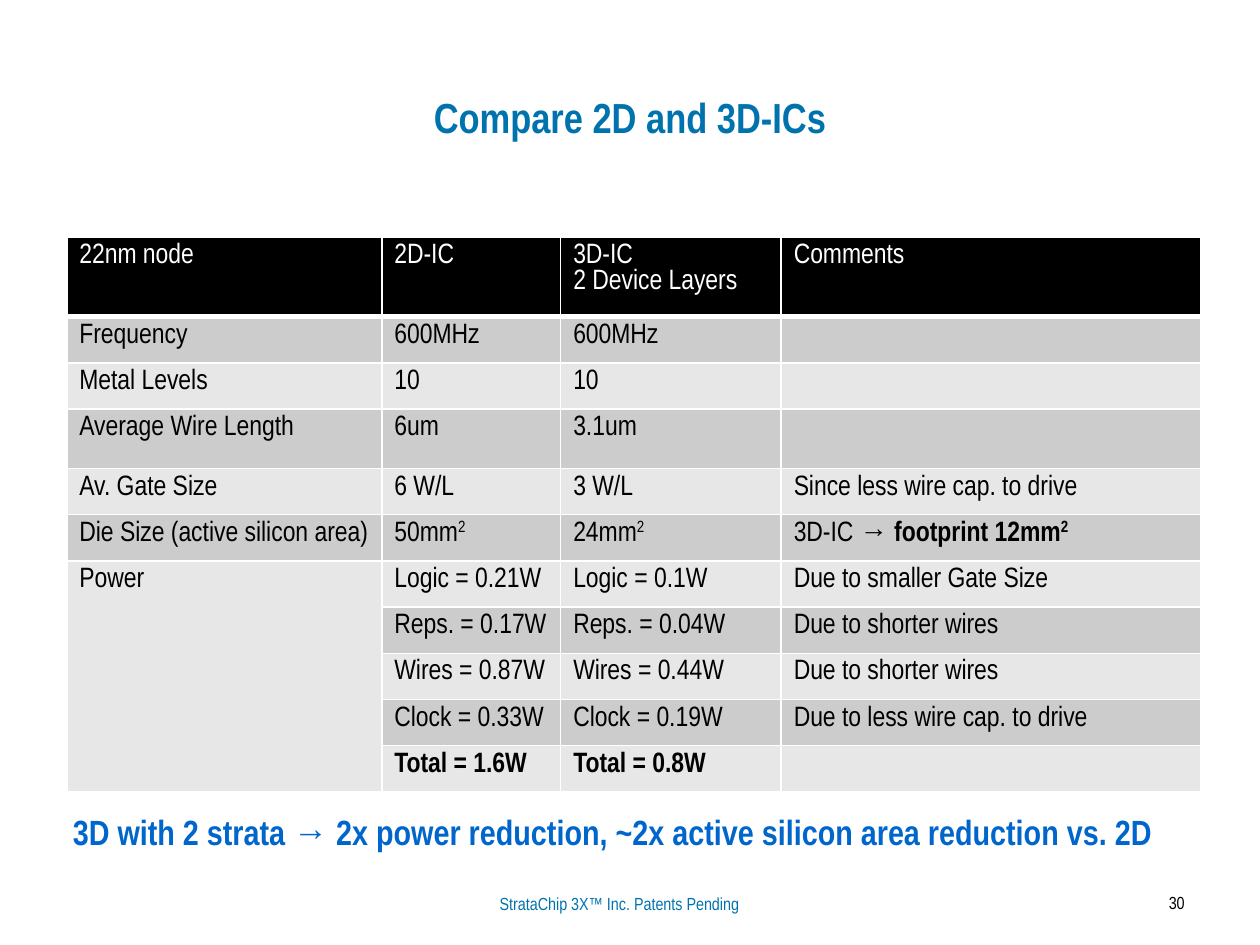
import pptx
import pptx.dml.color
import pptx.enum.text
import pptx.oxml.ns
import pptx.util
from lxml import etree
from pptx.util import Inches

FONT = "Arial Narrow"
COLORS = {
    "title": "0073AE",
    "takeaway": "0066CC",
    "text": "000000",
    "header": "000000",
    "header_text": "FFFFFF",
    "border": "FFFFFF",
    "dark_band": "CCCCCC",
    "light_band": "E7E7E7",
}
ALIGN = pptx.enum.text.PP_ALIGN
ANCHOR = pptx.enum.text.MSO_ANCHOR
COLUMN_WIDTHS = [2.5, 1.42, 1.75, 3.33]
ROW_HEIGHTS = [0.57, 0.36, 0.36, 0.47, 0.36, 0.33, 0.33] + [0.36] * 4
POWER_ROW = 6
COMPARISON = [
    ["22nm node", "2D-IC", "3D-IC\n2 Device Layers", "Comments"],
    ["Frequency", "600MHz", "600MHz", ""],
    ["Metal Levels", "10", "10", ""],
    ["Average Wire Length", "6um", "3.1um", ""],
    ["Av. Gate Size", "6 W/L", "3 W/L", "Since less wire cap. to drive"],
    ["Die Size (active silicon area)", "50mm^2", "24mm^2", "3D-IC → *footprint 12mm^2"],
    ["Power", "Logic = 0.21W", "Logic = 0.1W", "Due to smaller Gate Size"],
    ["", "Reps. = 0.17W", "Reps. = 0.04W", "Due to shorter wires"],
    ["", "Wires = 0.87W", "Wires = 0.44W", "Due to shorter wires"],
    ["", "Clock = 0.33W", "Clock = 0.19W", "Due to less wire cap. to drive"],
    ["", "*Total = 1.6W", "*Total = 0.8W", ""],
]


def rgb(name):
    """Return the named colour."""
    return pptx.dml.color.RGBColor.from_string(COLORS[name])


def style(paragraph, size, color, bold=False):
    """Set the font of a whole paragraph."""
    font = paragraph.font
    font.name, font.size, font.bold = FONT, pptx.util.Pt(size), bold
    font.color.rgb = rgb(color)


def add_text(slide, box, text, size, color, bold=False, align=ALIGN.LEFT, anchor=ANCHOR.TOP):
    """Place one line of text in a box and return its paragraph."""
    frame = slide.shapes.add_textbox(*map(Inches, box)).text_frame
    frame.word_wrap = True
    frame.vertical_anchor = anchor
    paragraph = frame.paragraphs[0]
    paragraph.text = text
    paragraph.alignment = align
    style(paragraph, size, color, bold)
    return paragraph


def add_takeaway(slide, box):
    """Place the concluding line with its hanging indent."""
    paragraph = add_text(
        slide, box,
        "3D with 2 strata → 2x power reduction, ~2x active silicon area reduction vs. 2D",
        20, "takeaway", bold=True,
    )
    properties = paragraph._p.get_or_add_pPr()
    properties.set("marL", str(Inches(0.38)))
    properties.set("indent", str(-Inches(0.38)))


def add_border(cell, side, width):
    """Draw one side of a cell's border."""
    qn = pptx.oxml.ns.qn
    line = etree.SubElement(
        cell._tc.get_or_add_tcPr(), qn("a:ln" + side), w=str(pptx.util.Pt(width))
    )
    fill = etree.SubElement(line, qn("a:solidFill"))
    etree.SubElement(fill, qn("a:srgbClr"), val=COLORS["border"])


def write_line(paragraph, line, color):
    """Write a cell line, where * starts bold text and ^ a superscript."""
    plain, _, strong = line.partition("*")
    for part, bold in ((plain, False), (strong, True)):
        base, _, exponent = part.partition("^")
        for text, raised in ((base, False), (exponent, True)):
            if text:
                run = paragraph.add_run()
                run.text = text
                if bold:
                    run.font.bold = True
                if raised:
                    run.font._element.set("baseline", "30000")
    style(paragraph, 16, color)
    if not line:
        etree.SubElement(paragraph._p, pptx.oxml.ns.qn("a:endParaRPr"), sz="1600")


def fill_cell(cell, text, fill, color, bottom):
    """Give a cell its borders, fill and text."""
    for side, width in (("L", 1), ("R", 1), ("T", 1), ("B", bottom)):
        add_border(cell, side, width)
    cell.fill.solid()
    cell.fill.fore_color.rgb = rgb(fill)
    for index, line in enumerate(text.split("\n")):
        frame = cell.text_frame
        write_line(frame.add_paragraph() if index else frame.paragraphs[0], line, color)


def add_comparison(slide, box):
    """Place the comparison table."""
    table = slide.shapes.add_table(
        len(ROW_HEIGHTS), len(COLUMN_WIDTHS), *map(Inches, box)
    ).table
    table.first_row = table.horz_banding = False
    for column, width in zip(table.columns, COLUMN_WIDTHS):
        column.width = Inches(width)
    for row, height in zip(table.rows, ROW_HEIGHTS):
        row.height = Inches(height)
    for r, texts in enumerate(COMPARISON):
        for c, text in enumerate(texts):
            if r == 0:
                look = ("header", "header_text", 3)
            else:
                banded = r % 2 and not (c == 0 and r > POWER_ROW)
                look = ("dark_band" if banded else "light_band", "text", 1)
            fill_cell(table.cell(r, c), text, *look)
    table.cell(POWER_ROW, 0).merge(table.cell(len(ROW_HEIGHTS) - 1, 0))


def main():
    """Build and save the slide."""
    deck = pptx.Presentation()
    deck.slide_width, deck.slide_height = Inches(10), Inches(7.5)
    slide = deck.slides.add_slide(deck.slide_layouts[6])
    add_text(slide, (0.5, 0.3, 9, 1.25), "Compare 2D and 3D-ICs", 24, "title",
             bold=True, align=ALIGN.CENTER, anchor=ANCHOR.MIDDLE)
    add_takeaway(slide, (0.48, 6.38, 9, 0.52))
    add_text(slide, (3.33, 7.04, 3.17, 0.26), "StrataChip 3X™ Inc. Patents Pending",
             10, "title", align=ALIGN.CENTER)
    add_text(slide, (8.39, 7.03, 1.11, 0.33), "30", 10, "text", align=ALIGN.RIGHT)
    add_comparison(slide, (0.53, 1.88, 9, 4.4))
    deck.save("out.pptx")


if __name__ == "__main__":
    main()
